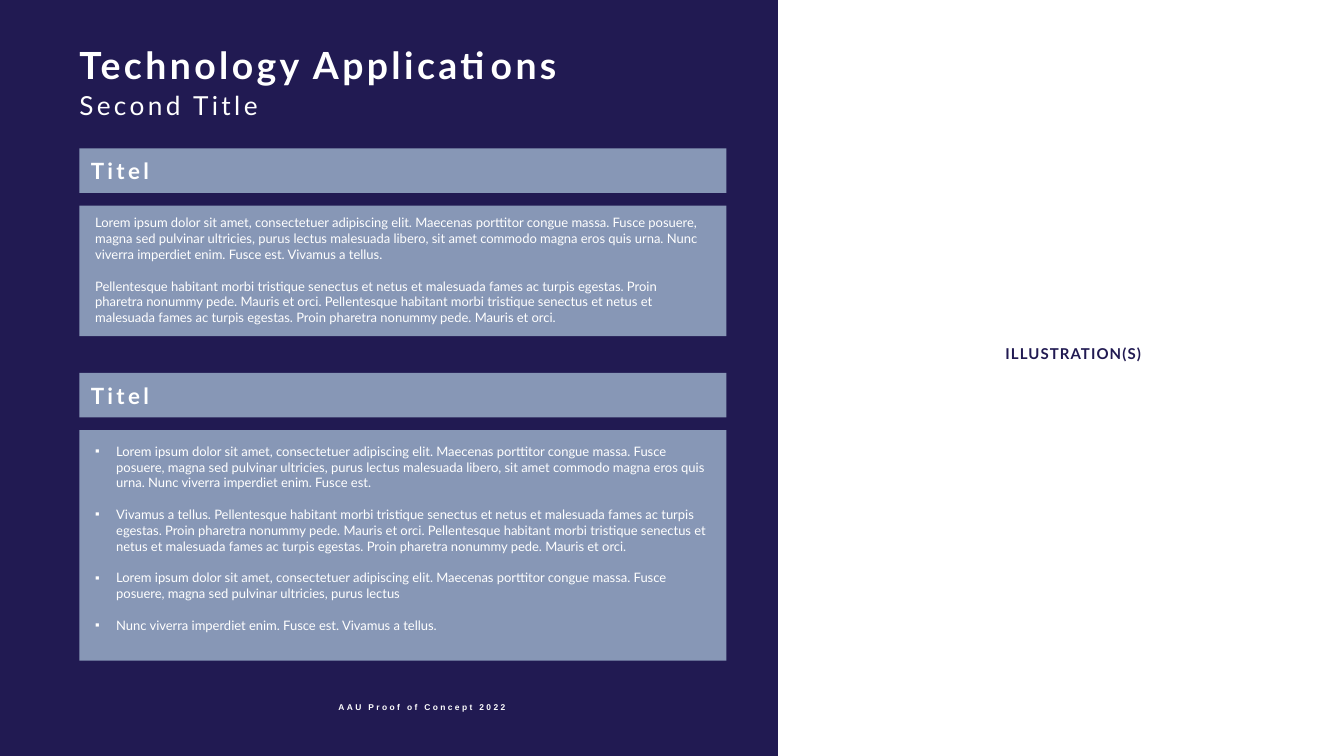
from lxml.etree import SubElement
from pptx import Presentation
from pptx.dml.color import RGBColor
from pptx.enum.shapes import MSO_SHAPE
from pptx.enum.text import PP_ALIGN
from pptx.oxml.ns import qn
from pptx.util import Cm, Pt

NAVY = RGBColor(0x21, 0x1A, 0x52)
STEEL = RGBColor(0x87, 0x97, 0xB6)
WHITE = RGBColor(0xFF, 0xFF, 0xFF)

SLIDE_W, SLIDE_H = 33.87, 19.05
SPLIT = 19.61
MARGIN = 2
PANEL_W = 16.31
HEADER_H = 1.12
BODY_OFFSET = 1.44
BODY_LINE = Pt(11.3)

LOREM = ("Lorem ipsum dolor sit amet, consectetuer adipiscing elit. "
         "Maecenas porttitor congue massa. Fusce posuere, magna sed pulvinar "
         "ultricies, purus lectus")
COMMODO = (" malesuada libero, sit amet commodo magna eros quis urna. "
           "Nunc viverra imperdiet enim. Fusce est.")
HABITANT = ("Pellentesque habitant morbi tristique senectus et netus et "
            "malesuada fames ac turpis egestas. Proin pharetra nonummy pede. "
            "Mauris et orci.")
DOUBLE_HABITANT = f"{HABITANT} {HABITANT}"

SUMMARY = [f"{LOREM}{COMMODO} Vivamus a tellus.", DOUBLE_HABITANT]
POINTS = [
    LOREM + COMMODO,
    f"Vivamus a tellus. {DOUBLE_HABITANT}",
    LOREM,
    "Nunc viverra imperdiet enim. Fusce est. Vivamus a tellus.",
]


def add_block(slide, left, top, width, height, color):
    block = slide.shapes.add_shape(
        MSO_SHAPE.RECTANGLE, Cm(left), Cm(top), Cm(width), Cm(height))
    block.shadow.inherit = False
    block.fill.solid()
    block.fill.fore_color.rgb = color
    block.line.fill.background()


def style_run(run, size, color, bold=False, spacing=0, font="Lato"):
    """Format a run; spacing is the letter spacing in points."""
    run.font.name = font
    run.font.size = Pt(size)
    run.font.bold = bold
    run.font.color.rgb = color
    if spacing:
        run.font._element.set("spc", str(round(spacing * 100)))


def add_label(slide, text, left, top, width, height, size, color=WHITE,
              bold=True, spacing=2.4, font="Lato", align=PP_ALIGN.LEFT):
    label = slide.shapes.add_textbox(Cm(left), Cm(top), Cm(width), Cm(height))
    frame = label.text_frame
    frame.word_wrap = True
    frame.margin_left = frame.margin_right = 0
    frame.margin_top = frame.margin_bottom = 0
    frame.text = text
    paragraph = frame.paragraphs[0]
    paragraph.alignment = align
    style_run(paragraph.runs[0], size, color, bold, spacing, font)


def add_bullet(paragraph):
    properties = paragraph._p.get_or_add_pPr()
    properties.set("marL", str(Cm(0.53)))
    properties.set("indent", str(-Cm(0.53)))
    SubElement(properties, qn("a:buFont")).set("typeface", "Arial")
    SubElement(properties, qn("a:buChar")).set("char", "▪")


def add_body(slide, texts, left, top, width, height, bulleted):
    body = slide.shapes.add_textbox(Cm(left), Cm(top), Cm(width), Cm(height))
    frame = body.text_frame
    frame.word_wrap = True
    frame.text = "\n".join(texts)
    for number, paragraph in enumerate(frame.paragraphs):
        if bulleted:
            add_bullet(paragraph)
        paragraph.line_spacing = BODY_LINE
        if number:
            paragraph.space_before = BODY_LINE
        style_run(paragraph.runs[0], 9.3, WHITE)


def add_section(slide, title, texts, left, top, width, body_height,
                text_inset, bulleted=False):
    """Place a header bar with a text panel below it."""
    add_block(slide, left, top, width, HEADER_H, STEEL)
    add_label(slide, title, left + 0.29, top + 0.23, width - 0.53, 0.69, 16)
    body_top = top + BODY_OFFSET
    add_block(slide, left, body_top, width, body_height, STEEL)
    add_body(slide, texts, left + 0.15, body_top + text_inset, width - 0.38,
             body_height - 2 * text_inset, bulleted)


def add_heading(slide, left, top):
    add_label(slide, "Technology Applications", left, top, 13.82, 1.14, 26.7)
    add_label(slide, "Second Title", left, top + 1.17, 7.34, 0.79, 18.7,
              bold=False)


def add_illustration_area(slide, left, top, width, height):
    add_block(slide, left, top, width, height, WHITE)
    label_w = 4
    add_label(slide, "ILLUSTRATION(S)", left + 7.44 - label_w / 2, top + 8.69,
              label_w, 0.46, 10.7, NAVY, spacing=0.8, align=PP_ALIGN.CENTER)


def main():
    deck = Presentation()
    deck.slide_width, deck.slide_height = Cm(SLIDE_W), Cm(SLIDE_H)
    slide = deck.slides.add_slide(deck.slide_layouts[6])
    slide.background.fill.solid()
    slide.background.fill.fore_color.rgb = NAVY

    add_illustration_area(slide, SPLIT, 0, SLIDE_W - SPLIT, SLIDE_H)
    add_heading(slide, MARGIN, 1.07)
    add_section(slide, "Titel", SUMMARY, MARGIN, 3.74, PANEL_W, 3.29, 0.1)
    add_section(slide, "Titel", POINTS, MARGIN, 9.4, PANEL_W, 5.81, 0.2,
                bulleted=True)
    add_label(slide, "AAU Proof of Concept 2022", 8.53, 17.68, 5.05, 0.79, 6,
              spacing=1.7, font="Arial")
    deck.save("out.pptx")


if __name__ == "__main__":
    main()
